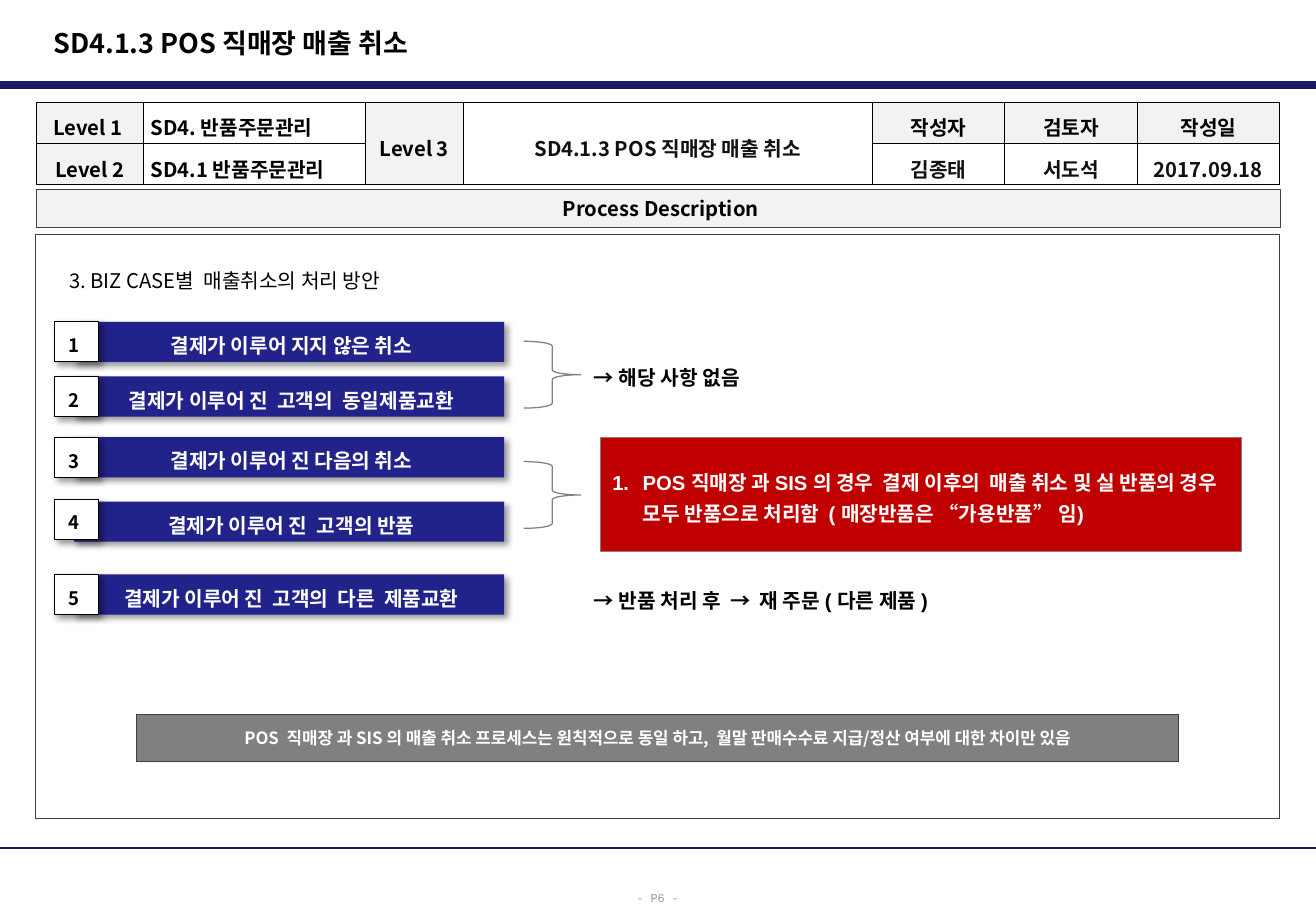
from lxml.etree import SubElement
from pptx import Presentation
from pptx.dml.color import RGBColor
from pptx.enum.shapes import MSO_CONNECTOR, MSO_SHAPE
from pptx.enum.text import MSO_ANCHOR as ANCHOR, MSO_AUTO_SIZE as AUTO_SIZE, PP_ALIGN as ALIGN
from pptx.oxml.ns import qn
from pptx.util import Inches, Pt

CELL = Inches(0.1)
COLUMNS, ROWS = 108.3, 75
NOTO, ARIAL, COURIER = "Noto Sans CJK KR", "Arial", "Courier New"

BLACK = RGBColor(0x00, 0x00, 0x00)
INK = RGBColor(0x11, 0x11, 0x11)
WHITE = RGBColor(0xFF, 0xFF, 0xFF)
PALE = RGBColor(0xF2, 0xF2, 0xF2)
FOOTER = RGBColor(0x96, 0x96, 0x96)
GRAY = RGBColor(0x80, 0x80, 0x80)
DARK = RGBColor(0x40, 0x40, 0x40)
RULE = RGBColor(0x19, 0x19, 0x66)
NAVY = RGBColor(0x22, 0x22, 0x8B)
RED = RGBColor(0xC0, 0x00, 0x00)

HEADER_WIDTHS = [8.8, 18.3, 8, 33.7, 10.9, 10.9, 11.7]
HEADER_ROWS = [
    ["Level 1 ", "SD4. 반품주문관리", "Level 3", "SD4.1.3 POS 직매장 매출 취소", "작성자", "검토자", "작성일"],
    ["Level 2", "SD4.1 반품주문관리", "", "", "김종태", "서도석", "2017.09.18"],
]
SHADED = {(0, 0), (1, 0), (0, 2), (1, 2), (0, 4), (0, 5), (0, 6)}

CASES = [
    (" 결제가 이루어 지지 않은 취소", 26.5, 26.5),
    (" 결제가 이루어 진  고객의  동일제품교환", 31, 31),
    (" 결제가 이루어 진 다음의 취소", 36, 36),
    (" 결제가 이루어 진  고객의 반품", 41.3, 41.1),
    (" 결제가 이루어 진  고객의  다른  제품교환", 47.3, 47.3),
]


def grid(*cells):
    """Convert grid columns and rows to lengths."""
    return [round(cell * CELL) for cell in cells]


def write(frame, text, size, color, font=NOTO, bold=True, align=ALIGN.LEFT, spacing=None):
    """Put one formatted paragraph in a text frame and return it."""
    frame.text = text
    paragraph = frame.paragraphs[0]
    paragraph.alignment = align
    if spacing:
        paragraph.line_spacing = spacing
    for run in paragraph.runs:
        run.font.size, run.font.bold, run.font.name = Pt(size), bold, font
        run.font.color.rgb = color
        SubElement(run.font._element, qn("a:ea")).set("typeface", NOTO)
    return paragraph


def add_box(slide, area, fill=None, line=None, width=0.5, kind=MSO_SHAPE.RECTANGLE):
    """Add a flat preset shape with centred anchoring."""
    shape = slide.shapes.add_shape(kind, *grid(*area))
    shape.shadow.inherit = False
    if fill is None:
        shape.fill.background()
    else:
        shape.fill.solid()
        shape.fill.fore_color.rgb = fill
    if line is None:
        shape.line.fill.background()
    else:
        shape.line.color.rgb = line
        shape.line.width = Pt(width)
    shape.text_frame.word_wrap = True
    shape.text_frame.vertical_anchor = ANCHOR.MIDDLE
    return shape


def cast_shadow(shape):
    """Give a shape a soft shadow towards the lower right."""
    effects = shape._element.spPr.find(qn("a:effectLst"))
    shadow = SubElement(effects, qn("a:outerShdw"), blurRad=str(Pt(4)), dist=str(Pt(3)),
                        dir="2700000", algn="tl", rotWithShape="0")
    color = SubElement(shadow, qn("a:srgbClr"), val=str(BLACK))
    SubElement(color, qn("a:alpha"), val="40000")


def add_rule(slide, row, width):
    """Draw a line across the whole slide."""
    rule = slide.shapes.add_connector(MSO_CONNECTOR.STRAIGHT, *grid(0, row, COLUMNS, row))
    rule.line.color.rgb = RULE
    rule.line.width = Pt(width)
    SubElement(rule._element.spPr, qn("a:effectLst"))


def add_text(slide, area, text, size, color, font, bold=True, spacing=None):
    """Add a plain text box."""
    frame = slide.shapes.add_textbox(*grid(*area)).text_frame
    frame.word_wrap = True
    write(frame, text, size, color, font, bold, spacing=spacing)


def set_title(slide, text):
    """Place and format the title placeholder."""
    title = slide.shapes.title
    title.left, title.top, title.width, title.height = grid(3.4, 1.6, 71.1, 3.8)
    title.text_frame.auto_size = AUTO_SIZE.NONE
    title.text_frame.vertical_anchor = ANCHOR.MIDDLE
    write(title.text_frame, text, 16, BLACK)


def format_cell(cell, shaded):
    """Set the borders, fill and margins of a table cell."""
    properties = cell._tc.get_or_add_tcPr()
    for side in ("a:lnL", "a:lnR", "a:lnT", "a:lnB"):
        border = SubElement(properties, qn(side), w=str(Pt(0.5)))
        SubElement(SubElement(border, qn("a:solidFill")), qn("a:srgbClr"), val=str(BLACK))
    if shaded:
        cell.fill.solid()
        cell.fill.fore_color.rgb = PALE
    else:
        cell.fill.background()
    cell.vertical_anchor = ANCHOR.MIDDLE
    cell.margin_left = cell.margin_right = Inches(0.06)
    cell.margin_top = cell.margin_bottom = Inches(0.01)


def add_header_table(slide):
    """Add the table of levels, people and date."""
    area = grid(3, 8.4, sum(HEADER_WIDTHS), 6.8)
    table = slide.shapes.add_table(len(HEADER_ROWS), len(HEADER_WIDTHS), *area).table
    table.first_row = table.horz_banding = False
    for column, width in zip(table.columns, grid(*HEADER_WIDTHS)):
        column.width = width
    for column in (2, 3):
        table.cell(0, column).merge(table.cell(1, column))
    for row, texts in enumerate(HEADER_ROWS):
        table.rows[row].height = grid(3.4)[0]
        for column, text in enumerate(texts):
            cell = table.cell(row, column)
            format_cell(cell, (row, column) in SHADED)
            if text:
                align = ALIGN.LEFT if column == 1 else ALIGN.CENTER
                color = INK if column == 3 or (row == 1 and column > 3) else BLACK
                write(cell.text_frame, text, 12, color, align=align, spacing=1.3)


def add_case(slide, number, text, bar_top, badge_top):
    """Add a numbered case bar."""
    bar = add_box(slide, (6.1, bar_top, 35.4, 3.3), NAVY)
    write(bar.text_frame, text, 12, WHITE, align=ALIGN.CENTER, spacing=1.3)
    badge = add_box(slide, (4.5, badge_top, 3.6, 3.3), WHITE, BLACK, 0.75)
    write(badge.text_frame, f"{number} ", 11, BLACK, align=ALIGN.CENTER, spacing=1.3)
    for shape in (bar, badge):
        cast_shadow(shape)


def add_policy(slide):
    """Add the red box with its numbered rule."""
    box = add_box(slide, (49.4, 36, 52.8, 9.4), RED, GRAY, 0.75)
    text = ("POS 직매장 과 SIS 의 경우  결제 이후의  매출 취소 및 실 반품의 "
            "경우 모두 반품으로 처리함  ( 매장반품은 “가용반품” 임)")
    paragraph = write(box.text_frame, text, 12, WHITE, ARIAL, spacing=1.3)
    properties = paragraph._p.get_or_add_pPr()
    properties.set("marL", str(Inches(0.25)))
    properties.set("indent", str(Inches(-0.25)))
    SubElement(properties, qn("a:buFont"), typeface=ARIAL)
    SubElement(properties, qn("a:buAutoNum"), type="arabicPeriod")


def main():
    """Build the slide and save it."""
    presentation = Presentation()
    presentation.slide_width, presentation.slide_height = grid(COLUMNS, ROWS)
    slide = presentation.slides.add_slide(presentation.slide_layouts[5])

    add_rule(slide, 7, 4.5)
    add_rule(slide, 69.8, 1.5)
    add_text(slide, (51.4, 72.5, 5.6, 2.5), "- P6 -", 7, FOOTER, COURIER, False, 1.3)
    set_title(slide, "SD4.1.3 POS 직매장 매출 취소")

    heading = add_box(slide, (3, 15.6, 102.4, 3.1), PALE, DARK)
    write(heading.text_frame, " Process Description", 12, BLACK, align=ALIGN.CENTER)
    body = add_box(slide, (2.9, 19.3, 102.4, 48.1), line=DARK).text_frame
    body.vertical_anchor = ANCHOR.TOP
    body.margin_left, body.margin_top = grid(2.8, 2.4)
    write(body, "3. BIZ CASE별  매출취소의 처리 방안", 12, BLACK, bold=False, spacing=1.2)
    add_header_table(slide)

    for number, case in enumerate(CASES, 1):
        add_case(slide, number, *case)
    add_policy(slide)
    for top, text in ((29.6, "→ 해당 사항 없음"), (47.9, "→ 반품 처리 후  →  재 주문 ( 다른 제품 )")):
        add_text(slide, (47.9, top, 42.6, 3), text, 12, BLACK, ARIAL)

    summary = add_box(slide, (11.2, 58.8, 85.8, 3.9), GRAY, DARK).text_frame
    summary.margin_left = summary.margin_right = Inches(0.04)
    write(summary, "POS  직매장 과 SIS 의 매출 취소 프로세스는 원칙적으로 동일 하고,  "
          "월말 판매수수료 지급/정산 여부에 대한 차이만 있음", 10, WHITE, align=ALIGN.CENTER)
    for top in (28.1, 38):
        add_box(slide, (43.1, top, 4.7, 5.5), line=GRAY, width=0.75, kind=MSO_SHAPE.RIGHT_BRACE)

    presentation.save("out.pptx")


if __name__ == "__main__":
    main()
